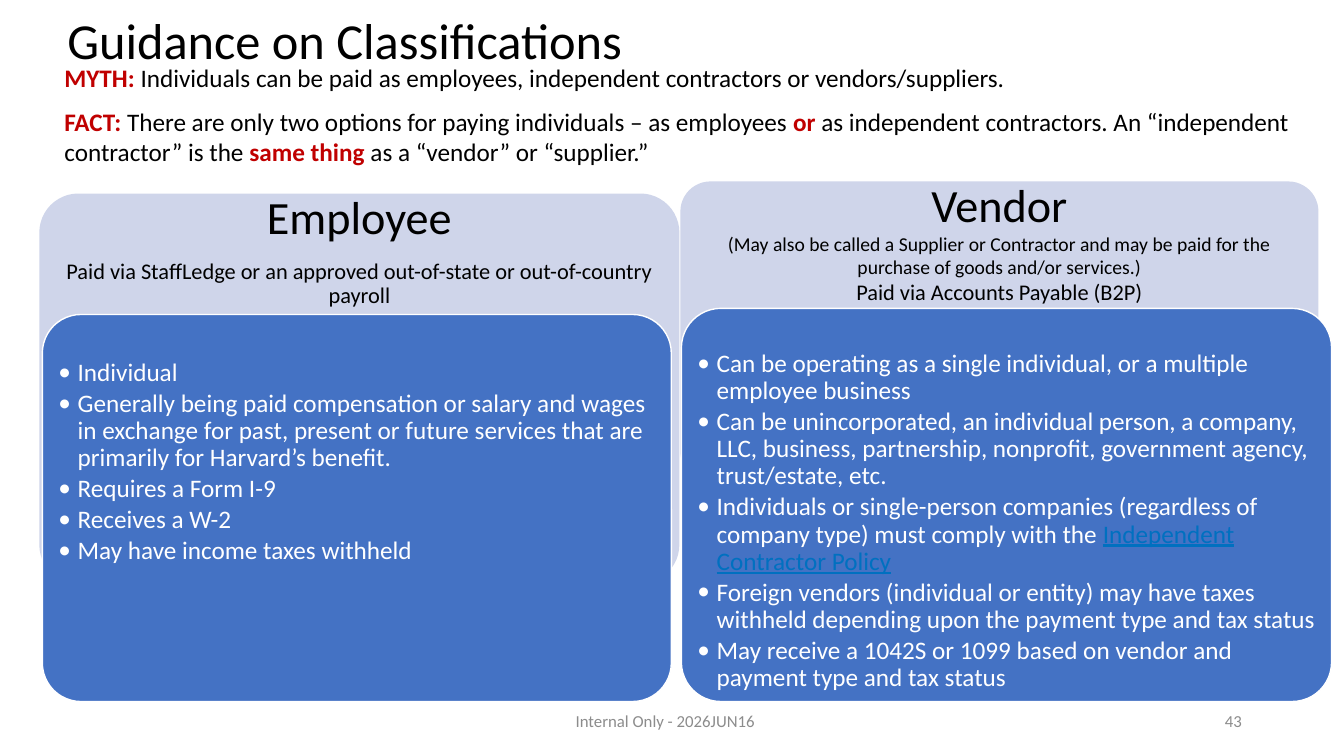
from lxml import etree
from pptx import Presentation
from pptx import util as u
from pptx.dml.color import RGBColor
from pptx.enum import shapes, text
from pptx.oxml.ns import qn

COLUMNS, ROWS = 80, 45
BLACK, WHITE, RED, LINK, GREY = "000000", "FFFFFF", "C00000", "0070C0", "8C8C8C"
PALE, BLUE = "CFD5EA", "4472C4"
LEFT, CENTER, RIGHT = text.PP_ALIGN.LEFT, text.PP_ALIGN.CENTER, text.PP_ALIGN.RIGHT


def rgb(value):
    return RGBColor.from_string(value)


class Deck:
    font_name = "Calibri"

    def __init__(self):
        self.presentation = Presentation()
        self.presentation.slide_width = u.Inches(13.33)
        self.presentation.slide_height = u.Inches(7.5)
        self.slide = self.presentation.slides.add_slide(self.presentation.slide_layouts[6])

    def place(self, left, top, width, height):
        column = self.presentation.slide_width / COLUMNS
        row = self.presentation.slide_height / ROWS
        return [u.Emu(round(size)) for size in (left * column, top * row, width * column, height * row)]

    def panel(self, box, fill, outline=None):
        shape = self.slide.shapes.add_shape(shapes.MSO_SHAPE.ROUNDED_RECTANGLE, *self.place(*box))
        shape.adjustments[0] = 0.1
        shape.shadow.inherit = False
        shape.fill.solid()
        shape.fill.fore_color.rgb = rgb(fill)
        if outline:
            shape.line.color.rgb = rgb(outline)
            shape.line.width = u.Pt(1)
        else:
            shape.line.fill.background()

    def text_frame(self, box, anchor=text.MSO_ANCHOR.TOP, side=0.1, ends=0.05):
        frame = self.slide.shapes.add_textbox(*self.place(*box)).text_frame
        frame.word_wrap = True
        frame.vertical_anchor = anchor
        frame.margin_left = frame.margin_right = u.Inches(side)
        frame.margin_top = frame.margin_bottom = u.Inches(ends)
        return frame

    def paragraph(self, frame, runs, size, color=BLACK, align=LEFT, spacing=1.0, after=0, bullet=False):
        paragraph = frame.paragraphs[0] if not frame.paragraphs[0].runs else frame.add_paragraph()
        if bullet:
            properties = paragraph._p.get_or_add_pPr()
            properties.set("marL", str(u.Inches(0.19)))
            properties.set("indent", str(-u.Inches(0.19)))
            etree.SubElement(properties, qn("a:buFont")).set("typeface", self.font_name)
            etree.SubElement(properties, qn("a:buChar")).set("char", "•")
        paragraph.alignment = align
        paragraph.line_spacing = spacing
        paragraph.space_after = u.Pt(after)
        paragraph.font.name = self.font_name
        paragraph.font.size = u.Pt(size)
        paragraph.font.color.rgb = rgb(color)
        for words, accent in [(runs, None)] if isinstance(runs, str) else runs:
            run = paragraph.add_run()
            run.text = words
            if accent:
                run.font.color.rgb = rgb(accent)
                run.font.bold = accent == RED
                run.font.underline = accent == LINK

    def label(self, box, words, size, color=BLACK, align=LEFT, spacing=1.0):
        frame = self.text_frame(box, text.MSO_ANCHOR.MIDDLE)
        self.paragraph(frame, words, size, color, align, spacing)

    def heading(self, box, lines, spacing, after):
        frame = self.text_frame(box, side=0.14, ends=0)
        for words, size in lines:
            self.paragraph(frame, words, size, align=CENTER, spacing=spacing, after=after)

    def bullets(self, box, items):
        frame = self.text_frame(box, side=0, ends=0)
        for item in items:
            self.paragraph(frame, item, 18, WHITE, spacing=0.9, after=2.6, bullet=True)


def main():
    deck = Deck()
    deck.label((3.42, 0, 72, 5.12), "Guidance on Classifications", 36, spacing=0.9)

    intro = deck.text_frame((3.24, 3.42, 74.52, 7.2))
    deck.paragraph(intro, [
        ("MYTH: ", RED),
        ("Individuals can be paid as employees, independent contractors or vendors/suppliers.", None),
    ], 18, after=9.8)
    deck.paragraph(intro, [
        ("FACT: ", RED),
        ("There are only two options for paying individuals – as employees ", None),
        ("or", RED),
        (" as independent contractors. An “independent contractor” is the ", None),
        ("same thing ", RED),
        ("as a “vendor” or “supplier.”", None),
    ], 18)

    deck.panel((2.34, 11.52, 38.1, 23.22), PALE)
    deck.panel((2.52, 18.72, 37.44, 23.04), BLUE, WHITE)
    deck.heading((2.34, 11.56, 38.1, 7), [
        ("Employee", 33),
        ("Paid via StaffLedge or an approved out-of-state or out-of-country payroll", 16),
    ], 0.9, 11.55)
    deck.bullets((3.48, 21.4, 35.52, 19.6), [
        "Individual",
        "Generally being paid compensation or salary and wages in exchange for past, "
        "present or future services that are primarily for Harvard’s benefit.",
        "Requires a Form I-9",
        "Receives a W-2",
        "May have income taxes withheld",
    ])

    deck.panel((40.5, 10.8, 37.98, 17.88), PALE)
    deck.panel((40.56, 18.36, 38.7, 23.4), BLUE, WHITE)
    deck.heading((40.5, 10.48, 37.98, 7.85), [
        ("Vendor", 33),
        ("(May also be called a Supplier or Contractor and may be paid for the "
         "purchase of goods and/or services.)", 14),
        ("Paid via Accounts Payable (B2P)", 16),
    ], 1.0, 0)
    deck.bullets((41.52, 20.87, 36.84, 20.5), [
        "Can be operating as a single individual, or a multiple employee business",
        "Can be unincorporated, an individual person, a company, LLC, business, "
        "partnership, nonprofit, government agency, trust/estate, etc.",
        [("Individuals or single-person companies (regardless of company type) "
          "must comply with the ", None), ("Independent Contractor Policy", LINK)],
        "Foreign vendors (individual or entity) may have taxes withheld depending "
        "upon the payment type and tax status",
        "May receive a 1042S or 1099 based on vendor and payment type and tax status",
    ])

    deck.label((26.1, 41.7, 27, 2.4), "Internal Only - 2026JUN16", 12, GREY, CENTER)
    deck.label((56.52, 41.7, 18, 2.4), "43", 12, GREY, RIGHT)
    deck.presentation.save("out.pptx")


if __name__ == "__main__":
    main()
